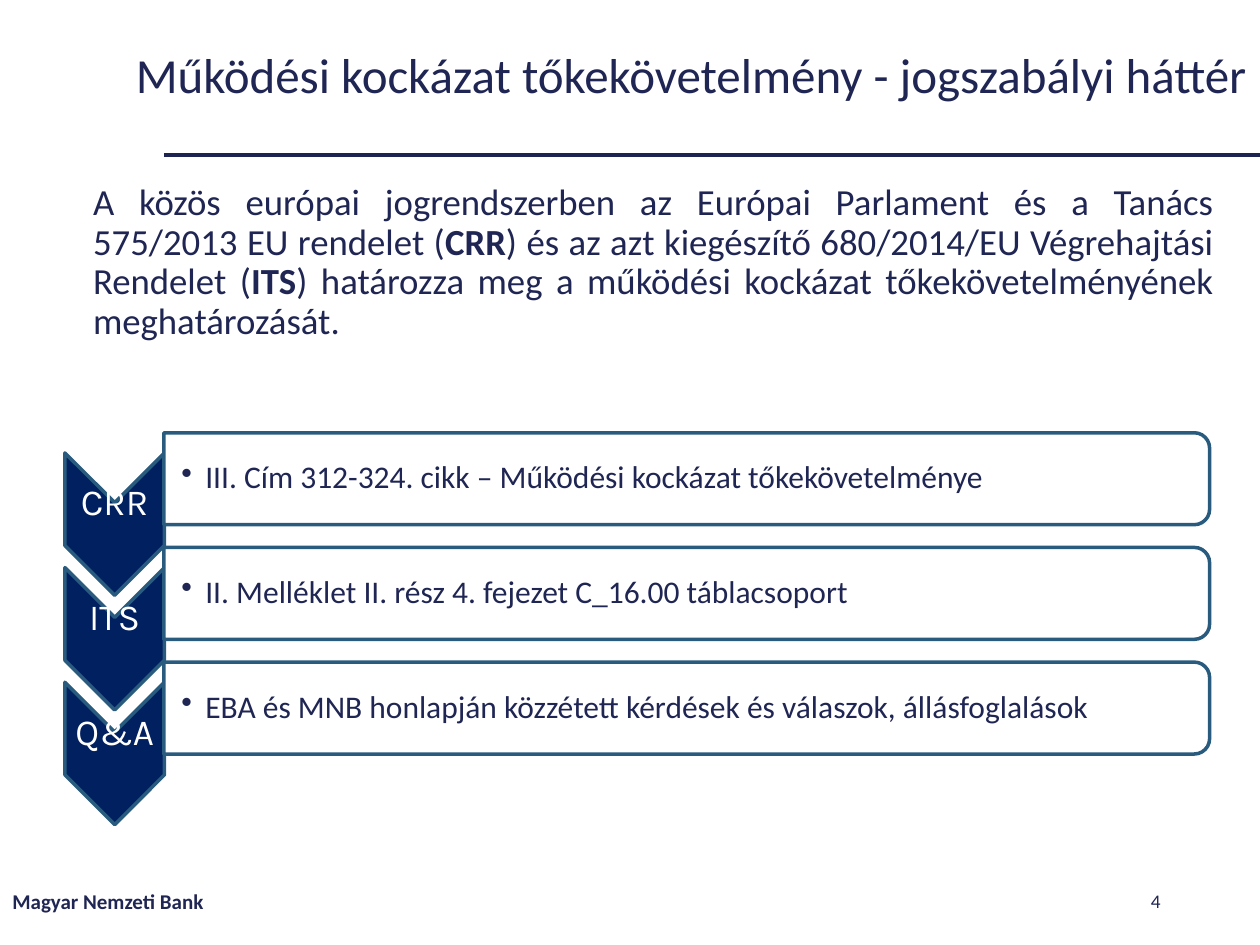
"""Builds the slide on the legal background of the operational risk capital requirement."""
from lxml.etree import SubElement
from pptx import Presentation
from pptx.dml.color import RGBColor
from pptx.enum.shapes import MSO_CONNECTOR as Connector, MSO_SHAPE as Shape
from pptx.enum.text import MSO_ANCHOR as Anchor, PP_ALIGN as Align
from pptx.oxml.ns import qn
from pptx.util import Inches, Pt

COLORS = {"text": "202653", "rule": "1E2452", "chevron": "002060",
          "outline": "295B7E", "white": "FFFFFF"}
TITLE = "Működési kockázat tőkekövetelmény - jogszabályi háttér"
INTRO = [
    ("A közös európai jogrendszerben az Európai Parlament és a Tanács 575/2013 EU rendelet (", False),
    ("CRR", True),
    (") és az azt kiegészítő 680/2014/EU Végrehajtási Rendelet (", False),
    ("ITS", True),
    (") határozza meg a működési kockázat tőkekövetelményének meghatározását.", False),
]
SOURCES = [
    ("CRR", "III. Cím 312-324. cikk – Működési kockázat tőkekövetelménye"),
    ("ITS", "II. Melléklet II. rész 4. fejezet C_16.00 táblacsoport"),
    ("Q&A", "EBA és MNB honlapján közzétett kérdések és válaszok, állásfoglalások"),
]
FOOTER = "Magyar Nemzeti Bank"
PAGE = "4"
FIRST_ROW, ROW_STEP = 3.8, 0.91
CHEVRON_X, CHEVRON_W, CHEVRON_H = 0.91, 0.79, 1.13
BAR_LEFT, BAR_W, BAR_H = 1.3, 8.3, 0.73


def rgb(name):
    return RGBColor.from_string(COLORS[name])


def add_text(slide, box, runs, size, color="text", font="Calibri", align=Align.LEFT,
             anchor=Anchor.MIDDLE, spacing=None, insets=None, bullet=False):
    frame = slide.shapes.add_textbox(*map(Inches, box)).text_frame
    frame.word_wrap = True
    frame.vertical_anchor = anchor
    if insets:
        (frame.margin_left, frame.margin_top,
         frame.margin_right, frame.margin_bottom) = map(Inches, insets)
    paragraph = frame.paragraphs[0]
    if bullet:
        props = paragraph._p.get_or_add_pPr()
        props.set("marL", str(Inches(0.19)))
        props.set("indent", str(-Inches(0.19)))
        SubElement(props, qn("a:buChar")).set("char", "•")
    paragraph.alignment = align
    paragraph.line_spacing = spacing
    for words, bold in runs:
        run = paragraph.add_run()
        run.text = words
        run.font.name = font
        run.font.size = Pt(size)
        run.font.bold = bold
        run.font.color.rgb = rgb(color)


def add_rotated(slide, kind, center_x, center_y, width, height, fill):
    shape = slide.shapes.add_shape(kind, Inches(center_x - width / 2), Inches(center_y - height / 2),
                                   Inches(width), Inches(height))
    shape.rotation = 90
    shape.shadow.inherit = False
    shape.fill.solid()
    shape.fill.fore_color.rgb = rgb(fill)
    shape.line.color.rgb = rgb("outline")
    shape.line.width = Pt(2)


def add_source(slide, row_y, label, detail):
    add_rotated(slide, Shape.CHEVRON, CHEVRON_X, row_y + 0.2 + 0.16, CHEVRON_H, CHEVRON_W, "chevron")
    add_text(slide, (CHEVRON_X - CHEVRON_W / 2, row_y + 0.03, CHEVRON_W, 0.34), [(label, False)],
             21, "white", "Karla", Align.CENTER, spacing=0.9, insets=[0.01] * 4)
    add_rotated(slide, Shape.ROUND_2_SAME_RECTANGLE, BAR_LEFT + BAR_W / 2, row_y,
                BAR_H, BAR_W, "white")
    add_text(slide, (BAR_LEFT, row_y - 0.33, 8.27, 0.66), [(detail, False)], 18,
             spacing=0.9, insets=(0.14, 0.01, 0.01, 0.01), bullet=True)


def main():
    deck = Presentation()
    deck.slide_width, deck.slide_height = Inches(10), Inches(7.5)
    slide = deck.slides.add_slide(deck.slide_layouts[6])

    rule = slide.shapes.add_connector(Connector.STRAIGHT, Inches(1.3), Inches(1.23),
                                      Inches(10), Inches(1.23))
    rule.line.color.rgb = rgb("rule")
    rule.line.width = Pt(2.25)
    SubElement(rule._element.spPr, qn("a:effectLst"))

    add_text(slide, (0.98, 0.2, 9.53, 0.83), [(TITLE, False)], 28, spacing=0.9)
    add_text(slide, (0.64, 1.41, 9.09, 1.5), INTRO, 21, align=Align.JUSTIFY,
             anchor=Anchor.TOP, spacing=0.9)
    for row, (label, detail) in enumerate(SOURCES):
        add_source(slide, FIRST_ROW + row * ROW_STEP, label, detail)
    add_text(slide, (0, 6.95, 3.38, 0.4), [(FOOTER, True)], 12)
    add_text(slide, (7.06, 6.95, 2.25, 0.4), [(PAGE, False)], 11, align=Align.RIGHT)
    deck.save("out.pptx")


if __name__ == "__main__":
    main()
